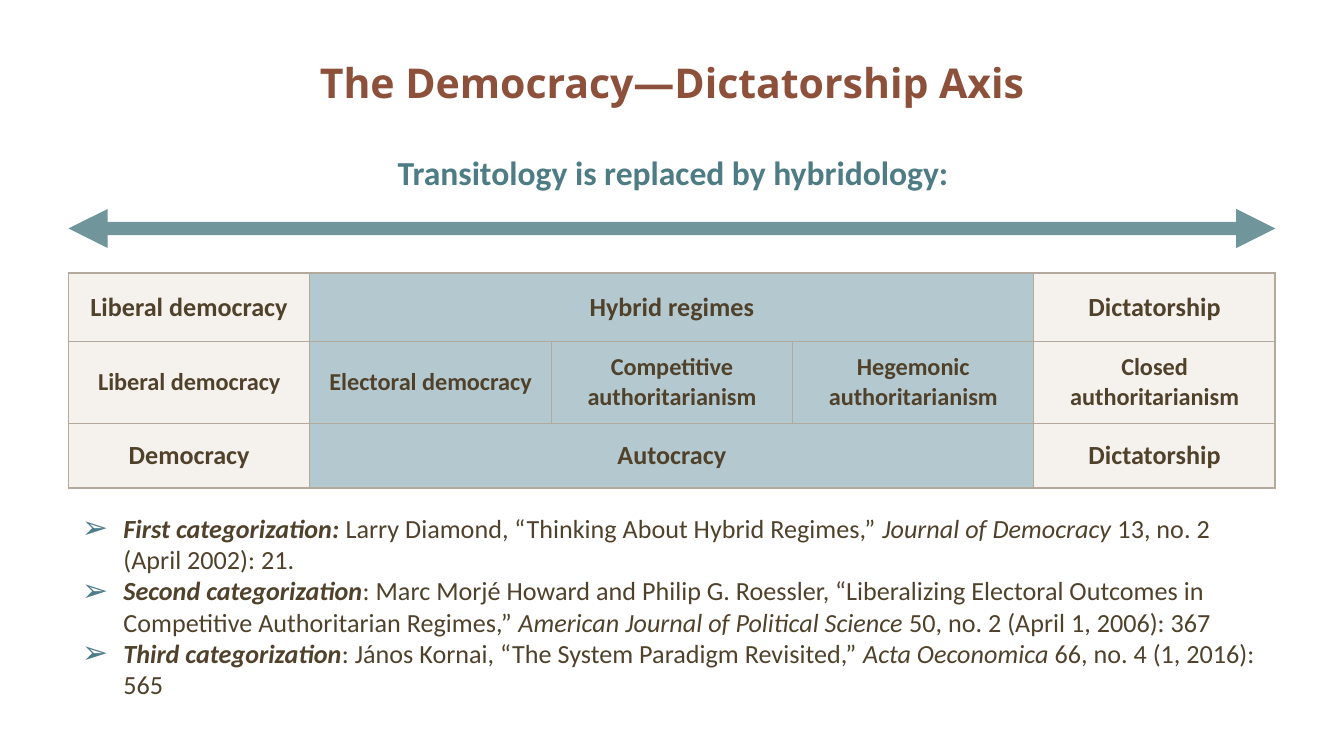
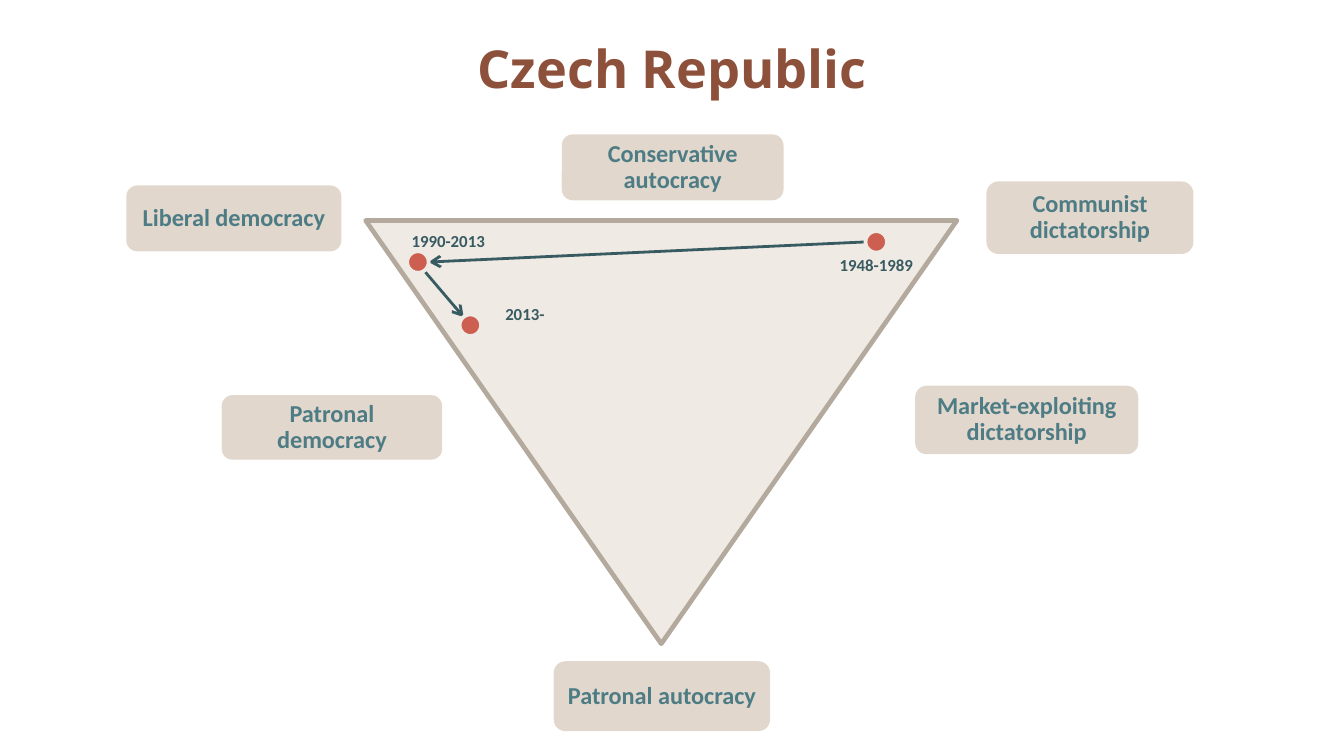
from lxml.etree import SubElement
from pptx import Presentation
from pptx.dml.color import RGBColor
from pptx.enum.shapes import MSO_CONNECTOR, MSO_SHAPE
from pptx.enum.text import MSO_ANCHOR, MSO_AUTO_SIZE, PP_ALIGN
from pptx.oxml.ns import qn
from pptx.util import Inches, Pt

COLORS = {
    "title": "8D503B", "teal": "4D7C84", "label": "4D7C85", "bullet": "4D7C8B",
    "text": "50412B", "pale": "EFEAE4", "blue": "6B95A1", "edge": "B3A99D",
    "tan": "C7B09A", "dot": "CD5F50", "dark": "385A61",
}
HEAD, BODY = "Open Sans", "Calibri"
WIDTH = 10
HEIGHT = WIDTH * 9 / 16

# Axis slide: (text, first column, columns spanned)
ROWS = [
    (0.51, 14, [("Liberal democracy", 0, 1), ("Hybrid regimes", 1, 3),
                ("Dictatorship", 4, 1)]),
    (0.61, 13, [("Liberal democracy", 0, 1), ("Electoral democracy", 1, 1),
                ("Competitive authoritarianism", 2, 1),
                ("Hegemonic authoritarianism", 3, 1),
                ("Closed authoritarianism", 4, 1)]),
    (0.48, 14, [("Democracy", 0, 1), ("Autocracy", 1, 3),
                ("Dictatorship", 4, 1)]),
]
COLS = 5
# Lead, work, journal, issue
NOTES = [
    ("First categorization: ",
     "Larry Diamond, “Thinking About Hybrid Regimes,” ",
     "Journal of Democracy", " 13, no. 2 (April 2002): 21."),
    ("Second categorization",
     ": Marc Morjé Howard and Philip G. Roessler, “Liberalizing Electoral "
     "Outcomes in Competitive Authoritarian Regimes,” ",
     "American Journal of Political Science",
     " 50, no. 2 (April 1, 2006): 367"),
    ("Third categorization",
     ": János Kornai, “The System Paradigm Revisited,” ",
     "Acta Oeconomica", " 66, no. 4 (1, 2016): 565"),
]
NOTE_STYLES = [(True, True), (False, False), (False, True), (False, False)]

# Triangle slide
REGIMES = [
    ("Communist dictatorship", (7.34, 1.35, 1.54, 0.54)),
    ("Liberal democracy", (0.94, 1.38, 1.6, 0.49)),
    ("Patronal autocracy", (4.12, 4.92, 1.61, 0.52)),
    ("Conservative autocracy", (4.18, 1, 1.65, 0.49)),
    ("Market-exploiting dictatorship", (6.81, 2.87, 1.66, 0.51)),
    ("Patronal democracy", (1.65, 2.94, 1.64, 0.48)),
]
DOT = 0.16
# Label, label box, alignment, dot corner
PERIODS = [
    ("1948-1989", (6.22, 1.91, 0.6, 0.12), PP_ALIGN.CENTER, (6.44, 1.72)),
    ("1990-2013", (3.03, 1.71, 0.61, 0.17), PP_ALIGN.CENTER, (3.03, 1.87)),
    ("2013-", (3.76, 2.27, 0.44, 0.13), PP_ALIGN.LEFT, (3.42, 2.34)),
]
MOVES = [((6.44, 1.8), (3.19, 1.95)), ((3.05, 1.89), (3.45, 2.36))]


def place(box):
    return [Inches(v) for v in box]


def color(name):
    return RGBColor.from_string(COLORS[name])


def style(font, size, name, face=BODY, bold=True, italic=False):
    font.size, font.name = Pt(size), face
    font.bold, font.italic = bold, italic
    font.color.rgb = color(name)


def fade(elem, share):
    """Set the opacity of the first colour in an element, in percent."""
    tone = next(elem.iter(qn("a:srgbClr")))
    SubElement(tone, qn("a:alpha"), val=str(share * 1000))


def write(frame, text, size, name, align=PP_ALIGN.CENTER, face=BODY):
    frame.text = text
    frame.word_wrap = True
    frame.vertical_anchor = MSO_ANCHOR.MIDDLE
    para = frame.paragraphs[0]
    para.alignment = align
    style(para.runs[0].font, size, name, face)


def inset(frame, gap):
    frame.margin_left = frame.margin_right = Inches(gap)
    frame.margin_top = frame.margin_bottom = Inches(gap)


def start(deck, text, box, size):
    """Add a title-only slide with its title set."""
    slide = deck.slides.add_slide(deck.slide_layouts[5])
    title = slide.shapes.title
    title.left, title.top, title.width, title.height = place(box)
    write(title.text_frame, text, size, "title", face=HEAD)
    title.text_frame.auto_size = MSO_AUTO_SIZE.NONE
    return slide


def shape(slide, kind, box, fill, edge=None, width=0):
    item = slide.shapes.add_shape(kind, *place(box))
    item.shadow.inherit = False
    item.fill.solid()
    item.fill.fore_color.rgb = color(fill)
    if edge:
        item.line.color.rgb = color(edge)
        item.line.width = Pt(width)
    else:
        item.line.fill.background()
    return item


def arrow(slide, begin, end, name, width, **tips):
    item = slide.shapes.add_connector(
        MSO_CONNECTOR.STRAIGHT, *place(begin + end))
    item.line.color.rgb = color(name)
    item.line.width = Pt(width)
    props = item._element.spPr
    line = props.find(qn("a:ln"))
    for tag, kind in tips.items():
        SubElement(line, qn("a:" + tag), type=kind)
    SubElement(props, qn("a:effectLst"))
    return item


def border(cell, row, col):
    """Draw thin inner and thicker outer cell edges."""
    props = cell._tc.get_or_add_tcPr()
    outer = {"lnL": col == 0, "lnR": col == COLS - 1,
             "lnT": row == 0, "lnB": row == len(ROWS) - 1}
    for spot, (tag, thick) in enumerate(outer.items()):
        line = SubElement(props, qn("a:" + tag), w=str(Pt(1 if thick else 0.5)))
        fill = SubElement(line, qn("a:solidFill"))
        SubElement(fill, qn("a:srgbClr"), val=COLORS["edge"])
        props.insert(spot, line)


def grid(slide):
    table = slide.shapes.add_table(
        len(ROWS), COLS, *place((0.51, 2.03, 8.98, 1.6))).table
    for col in table.columns:
        col.width = Inches(8.98 / COLS)
    for row, (height, size, parts) in enumerate(ROWS):
        table.rows[row].height = Inches(height)
        for col in range(COLS):
            cell = table.cell(row, col)
            tone, share = ("pale", 60) if col in (0, COLS - 1) else ("blue", 50)
            cell.fill.solid()
            cell.fill.fore_color.rgb = color(tone)
            fade(cell._tc.tcPr, share)
            border(cell, row, col)
        for text, col, span in parts:
            cell = table.cell(row, col)
            if span > 1:
                cell.merge(table.cell(row, col + span - 1))
            write(cell.text_frame, text, size, "text")
            cell.vertical_anchor = MSO_ANCHOR.MIDDLE


def bullet(para):
    props = para._p.get_or_add_pPr()
    props.set("marL", str(Inches(0.31)))
    props.set("indent", str(-Inches(0.31)))
    tone = SubElement(props, qn("a:buClr"))
    SubElement(tone, qn("a:srgbClr"), val=COLORS["bullet"])
    SubElement(props, qn("a:buSzPct"), val="120000")
    SubElement(props, qn("a:buFont"), typeface=BODY)
    SubElement(props, qn("a:buChar"), char="➢")


def notes(slide):
    frame = slide.shapes.add_textbox(*place((0.51, 3.76, 8.98, 1.51))).text_frame
    frame.word_wrap = True
    for i, parts in enumerate(NOTES):
        para = frame.add_paragraph() if i else frame.paragraphs[0]
        bullet(para)
        for text, (bold, italic) in zip(parts, NOTE_STYLES):
            run = para.add_run()
            run.text = text
            style(run.font, 14, "text", bold=bold, italic=italic)


def axis(deck):
    slide = start(deck, "The Democracy—Dictatorship Axis",
                  (0.12, 0.14, 9.76, 0.94), 22)
    line = arrow(slide, (0.51, 1.7), (9.49, 1.7), "teal", 7,
                 headEnd="triangle", tailEnd="triangle")
    fade(line._element.spPr, 80)
    lead = slide.shapes.add_textbox(*place((0.13, 1.08, 9.76, 0.4)))
    write(lead.text_frame, "Transitology is replaced by hybridology:", 18, "teal")
    grid(slide)
    notes(slide)


def country(deck):
    slide = start(deck, "Czech Republic", (0.12, 0, 9.76, 1), 28)
    field = shape(slide, MSO_SHAPE.ISOSCELES_TRIANGLE,
                  (2.72, 1.64, 4.4, 3.15), "pale", "edge", 2.5)
    field.rotation = 180
    for text, box in REGIMES:
        card = shape(slide, MSO_SHAPE.ROUNDED_RECTANGLE, box, "tan")
        fade(card._element.spPr, 50)
        write(card.text_frame, text, 13, "label")
        inset(card.text_frame, 0.07)
        card.text_frame.paragraphs[0].line_spacing = 0.9
    for begin, end in MOVES:
        arrow(slide, begin, end, "dark", 1.5, tailEnd="arrow")
    for text, box, align, spot in PERIODS:
        shape(slide, MSO_SHAPE.OVAL, spot + (DOT, DOT), "dot", "pale", 2)
        label = slide.shapes.add_textbox(*place(box))
        write(label.text_frame, text, 9, "dark", align)
        inset(label.text_frame, 0)


def main():
    deck = Presentation()
    deck.slide_width, deck.slide_height = Inches(WIDTH), Inches(HEIGHT)
    axis(deck)
    country(deck)
    deck.save("out.pptx")


if __name__ == "__main__":
    main()
